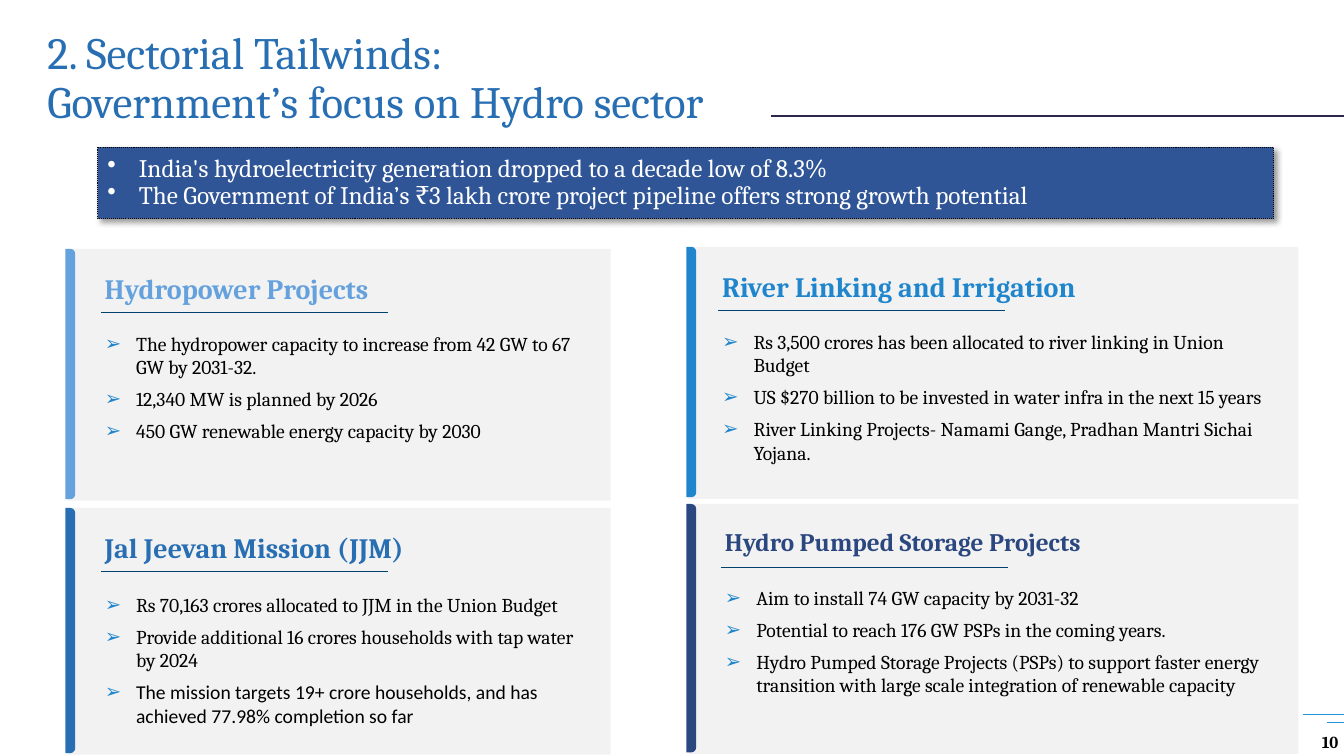
import copy
import dataclasses

import pptx
import pptx.dml.color
import pptx.enum.dml
import pptx.enum.shapes
import pptx.enum.text
import pptx.oxml
import pptx.oxml.ns
import pptx.util

Cm = pptx.util.Cm
Pt = pptx.util.Pt
RGBColor = pptx.dml.color.RGBColor
Align = pptx.enum.text.PP_ALIGN
Anchor = pptx.enum.text.MSO_ANCHOR
Preset = pptx.enum.shapes.MSO_SHAPE
qn = pptx.oxml.ns.qn

BLACK = RGBColor(0x00, 0x00, 0x00)
WHITE = RGBColor(0xFF, 0xFF, 0xFF)
PANEL_GREY = RGBColor(0xF2, 0xF2, 0xF2)
BANNER_BLUE = RGBColor(0x2F, 0x55, 0x97)
TITLE_BLUE = RGBColor(0x28, 0x6E, 0xB2)
LIGHT_BLUE = RGBColor(0x65, 0xA1, 0xDD)
BRIGHT_BLUE = RGBColor(0x1F, 0x85, 0xCC)
NAVY = RGBColor(0x2B, 0x47, 0x80)
HEADING_RULE = RGBColor(0x00, 0x42, 0x6D)
TITLE_RULE = RGBColor(0x2C, 0x28, 0x4B)
PAGE_RULE = RGBColor(0x24, 0x94, 0xD5)


@dataclasses.dataclass
class Card:
    """One topic panel, with lengths in centimetres."""
    heading: str
    accent: RGBColor
    left: float
    top: float
    width: float
    height: float
    text_left: float
    list_top: float
    list_width: float
    points: list
    heading_size: int = 20
    last_font: str = "Cambria"


CARDS = [
    Card("Hydropower Projects", LIGHT_BLUE, 1.7, 6.27, 13.69, 6.35, 2.64, 8.36, 12.09, [
        "The hydropower capacity to increase from 42 GW to 67 GW by 2031-32.",
        "12,340 MW is planned by 2026",
        "450 GW renewable energy capacity by 2030"]),
    Card("Jal Jeevan Mission (JJM)", TITLE_BLUE, 1.7, 12.8, 13.69, 6.22, 2.64, 14.94, 12.09, [
        "Rs 70,163 crores allocated to JJM in the Union Budget",
        "Provide additional 16 crores households with tap water by 2024",
        "The mission targets 19+ crore households, and has achieved 77.98% completion so far"],
        last_font="Calibri"),
    Card("River Linking and Irrigation", BRIGHT_BLUE, 17.35, 6.22, 15.37, 6.35, 18.2, 8.31, 14, [
        "Rs 3,500 crores has been allocated to river linking in Union Budget",
        "US $270 billion to be invested in water infra in the next 15 years",
        "River Linking Projects- Namami Gange, Pradhan Mantri Sichai Yojana."]),
    Card("Hydro Pumped Storage Projects", NAVY, 17.35, 12.7, 15.37, 6.3, 18.27, 14.76, 13.92, [
        "Aim to install 74 GW capacity by 2031-32",
        "Potential to reach 176 GW PSPs in the coming years.",
        "Hydro Pumped Storage Projects (PSPs) to support faster energy transition "
        "with large scale integration of renewable capacity"],
        heading_size=18),
]


def place(element, left, top, width, height):
    """Move and size an element in centimetres."""
    element.left, element.top = Cm(left), Cm(top)
    element.width, element.height = Cm(width), Cm(height)


def format_runs(paragraph, size, color, bold=False, font="Cambria"):
    """Give every run of a paragraph the same font."""
    for run in paragraph.runs:
        run.font.name = font
        run.font.size = Pt(size)
        run.font.bold = bold
        run.font.color.rgb = color


def add_bullet(paragraph, mark, color):
    """Give a paragraph a hanging bullet."""
    properties = paragraph._p.get_or_add_pPr()
    properties.set("marL", str(Cm(0.79)))
    properties.set("indent", str(-Cm(0.79)))
    bullet_color = properties.makeelement(qn("a:buClr"), {})
    bullet_color.append(properties.makeelement(qn("a:srgbClr"), {"val": str(color)}))
    properties.append(bullet_color)
    properties.append(properties.makeelement(qn("a:buChar"), {"char": mark}))


def add_rule(slide, left, top, right, color, weight=0.5):
    """Draw a horizontal line."""
    rule = slide.shapes.add_connector(
        pptx.enum.shapes.MSO_CONNECTOR.STRAIGHT, Cm(left), Cm(top), Cm(right), Cm(top))
    rule.line.color.rgb = color
    rule.line.width = Pt(weight)
    properties = rule._element.spPr
    properties.append(properties.makeelement(qn("a:effectLst"), {}))


def add_block(slide, preset, left, top, width, height, color):
    """Draw a flat filled shape without outline."""
    block = slide.shapes.add_shape(preset, Cm(left), Cm(top), Cm(width), Cm(height))
    block.shadow.inherit = False
    block.fill.solid()
    block.fill.fore_color.rgb = color
    block.line.fill.background()
    return block


def clear_insets(frame):
    """Remove the inner margins of a text frame."""
    frame.margin_left = frame.margin_top = frame.margin_right = frame.margin_bottom = 0


def add_label(slide, text, left, top, width, height, size, color):
    """Add a bold one-line text box and return its frame."""
    frame = slide.shapes.add_textbox(Cm(left), Cm(top), Cm(width), Cm(height)).text_frame
    frame.word_wrap = True
    frame.text = text
    format_runs(frame.paragraphs[0], size, color, bold=True)
    return frame


def fill_title(title):
    """Write the two-line slide title."""
    place(title, 0.94, 0.66, 20.02, 2.69)
    frame = title.text_frame
    frame.auto_size = pptx.enum.text.MSO_AUTO_SIZE.NONE
    frame.vertical_anchor = Anchor.MIDDLE
    heading = frame.paragraphs[0]
    heading.text = "2. Sectorial Tailwinds:\vGovernment’s focus on Hydro sector"
    heading.alignment = Align.LEFT
    heading.line_spacing = 0.9
    format_runs(heading, 32, TITLE_BLUE)
    for line_break in heading._p.findall(qn("a:br")):
        line_break.append(copy.deepcopy(heading.runs[0]._r.rPr))


def fill_list(slide, body, card):
    """Write the points of a card in a body placeholder above its panel."""
    slide.shapes._spTree.append(body._element)
    place(body, card.text_left, card.list_top, card.list_width, 3.8)
    frame = body.text_frame
    clear_insets(frame)
    frame.auto_size = pptx.enum.text.MSO_AUTO_SIZE.NONE
    frame.vertical_anchor = Anchor.TOP
    frame.text = "\n".join(card.points)
    for point in frame.paragraphs:
        add_bullet(point, "➢", BRIGHT_BLUE)
        point.space_before = Pt(0)
        point.space_after = Pt(6)
        format_runs(point, 14, BLACK)
    format_runs(frame.paragraphs[-1], 14, BLACK, font=card.last_font)


def add_card(slide, body, card):
    """Build a panel with accent bar, heading, rule and list."""
    add_block(slide, Preset.RECTANGLE, card.left, card.top, card.width, card.height, PANEL_GREY)
    fill_list(slide, body, card)
    rule_left = card.text_left - 0.1
    add_rule(slide, rule_left, card.top + 1.6, rule_left + 7.23, HEADING_RULE)
    heading = add_label(slide, card.heading, card.text_left, card.top + 0.56, 11, 0.86,
                        card.heading_size, card.accent)
    clear_insets(heading)
    length, thickness = card.height - 0.04, 0.25
    middle = card.top + card.height / 2 - 0.02
    accent_bar = add_block(slide, Preset.ROUND_2_SAME_RECTANGLE,
                           card.left + 0.07 - length / 2, middle - thickness / 2,
                           length, thickness, card.accent)
    accent_bar.adjustments[0] = 0.5
    accent_bar.rotation = 90


def add_banner(slide):
    """Add the shadowed key message banner."""
    banner = add_block(slide, Preset.RECTANGLE, 2.46, 3.71, 29.64, 1.8, BANNER_BLUE)
    banner.line.color.rgb = BLACK
    banner.line.width = Pt(0.75)
    banner.line.dash_style = pptx.enum.dml.MSO_LINE.ROUND_DOT
    banner._element.spPr.find(qn("a:effectLst")).append(pptx.oxml.parse_xml(
        '<a:outerShdw xmlns:a="http://schemas.openxmlformats.org/drawingml/2006/main" '
        'blurRad="50800" dist="38100" dir="2700000" algn="tl" rotWithShape="0">'
        '<a:srgbClr val="000000"><a:alpha val="40000"/></a:srgbClr></a:outerShdw>'))
    frame = banner.text_frame
    frame.vertical_anchor = Anchor.MIDDLE
    frame.text = ("India's hydroelectricity generation dropped to a decade low of 8.3%\n"
                  "The Government of India’s ₹3 lakh crore project pipeline offers "
                  "strong growth potential")
    for message in frame.paragraphs:
        add_bullet(message, "•", WHITE)
        message.alignment = Align.JUSTIFY
        message.line_spacing = 0.9
        format_runs(message, 18, WHITE)


def main():
    """Build and save the slide."""
    deck = pptx.Presentation()
    deck.slide_width, deck.slide_height = Cm(33.87), Cm(19.05)
    slide = deck.slides.add_slide(deck.slide_layouts.get_by_name("Comparison"))
    title, *bodies = list(slide.placeholders)
    add_rule(slide, 32.84, 18.01, 33.87, PAGE_RULE)
    add_rule(slide, 33.43, 18.19, 33.87, PAGE_RULE)
    page_number = add_label(slide, "10", 25.83, 18.14, 8.15, 1.12, 12, BLACK)
    page_number.vertical_anchor = Anchor.MIDDLE
    page_number.paragraphs[0].alignment = Align.RIGHT
    add_rule(slide, 19.43, 2.92, 33.87, TITLE_RULE, 1.5)
    fill_title(title)
    for body, card in zip(bodies, CARDS):
        add_card(slide, body, card)
    add_banner(slide)
    deck.save("out.pptx")


if __name__ == "__main__":
    main()
